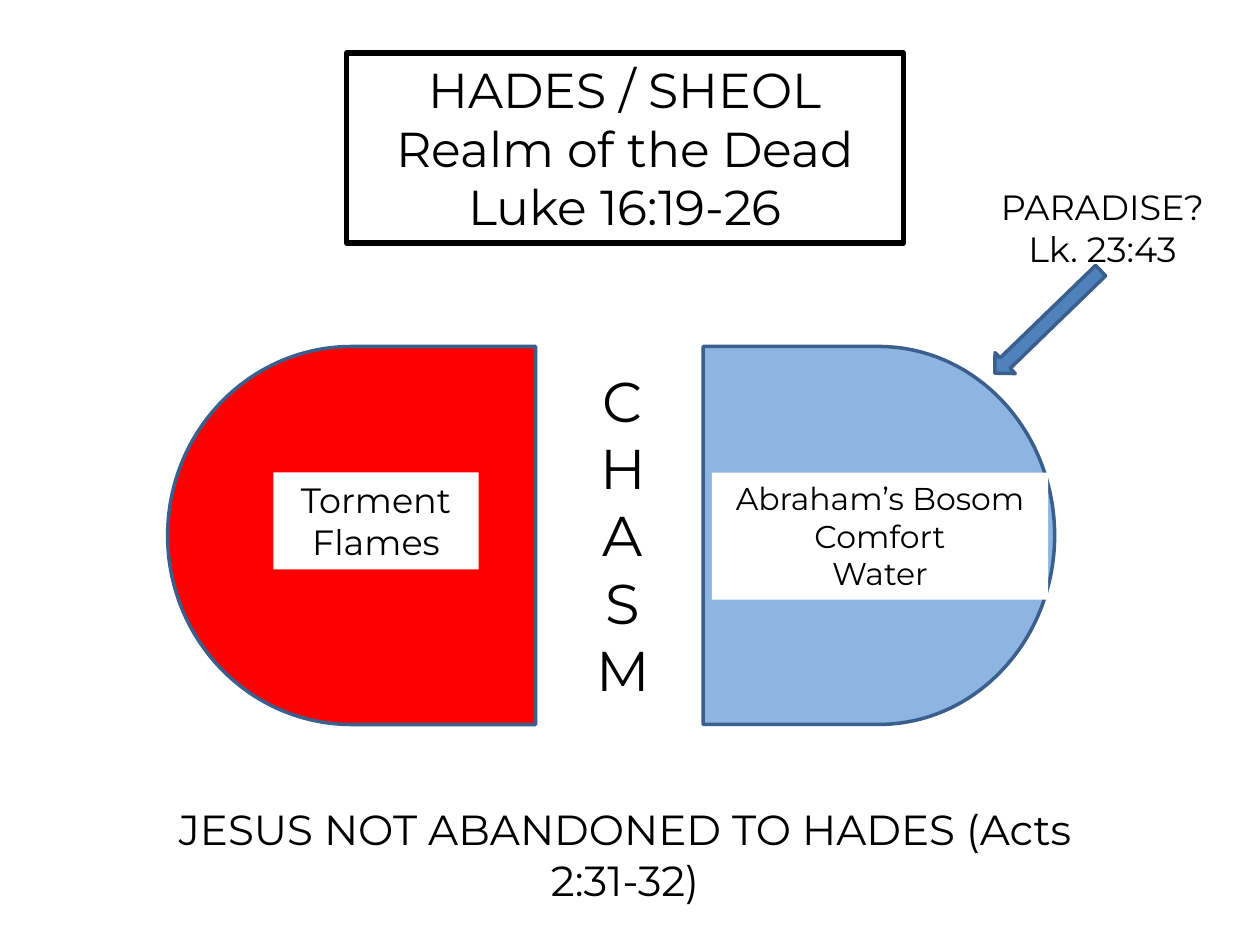
from pptx import Presentation
from pptx.dml.color import RGBColor
from pptx.enum.shapes import MSO_SHAPE
from pptx.enum.text import MSO_ANCHOR, MSO_AUTO_SIZE, PP_ALIGN
from pptx.util import Inches, Pt

COLORS = {
    "text": "000000",
    "label": "FFFFFF",
    "torment": "FF0000",
    "comfort": "8EB4E3",
    "arrow": "4F81BD",
    "outline": "3A5F8C",
}
FONT = "Montserrat"


def color(name):
    return RGBColor.from_string(COLORS[name])


def place(shape, box):
    shape.left, shape.top, shape.width, shape.height = map(Inches, box)


def write(shape, lines, size, anchor=MSO_ANCHOR.TOP):
    frame = shape.text_frame
    frame.text = "\n".join(lines)
    frame.word_wrap = True
    frame.auto_size = MSO_AUTO_SIZE.NONE
    frame.vertical_anchor = anchor
    for para in frame.paragraphs:
        para.alignment = PP_ALIGN.CENTER
        for span in para.runs:
            span.font.name = FONT
            span.font.size = Pt(size)
            span.font.color.rgb = color("text")


def add_title(page, box, lines):
    title = page.shapes.title
    place(title, box)
    write(title, lines, 28)
    title.line.color.rgb = color("text")
    title.line.width = Pt(3)


def add_text(page, box, lines, size):
    write(page.shapes.add_textbox(*map(Inches, box)), lines, size)


def add_figure(page, kind, box, fill, rotation=0):
    figure = page.shapes.add_shape(kind, *map(Inches, box))
    figure.shadow.inherit = False
    figure.rotation = rotation
    figure.fill.solid()
    figure.fill.fore_color.rgb = color(fill)
    figure.line.color.rgb = color("outline")
    figure.line.width = Pt(2)
    return figure


def add_label(page, box, lines, size):
    label = add_figure(page, MSO_SHAPE.RECTANGLE, box, "label")
    label.line.fill.background()
    write(label, lines, size)


def add_realm(page, box, fill, label_box, lines, size, rotation=0):
    add_figure(page, MSO_SHAPE.FLOWCHART_DELAY, box, fill, rotation)
    add_label(page, label_box, lines, size)


def add_paradise(page, text_box, arrow_box):
    add_figure(page, MSO_SHAPE.RIGHT_ARROW, arrow_box, "arrow", 135.9)
    add_text(page, text_box, ["PARADISE?", "Lk. 23:43"], 20)


def main():
    deck = Presentation()
    deck.slide_width, deck.slide_height = Inches(10), Inches(7.5)
    page = deck.slides.add_slide(deck.slide_layouts[5])
    add_title(page, (2.75, 0.42, 4.42, 1.51),
              ["HADES / SHEOL", "Realm of the Dead", "Luke 16:19-26"])
    add_realm(page, (1.33, 2.75, 2.92, 3), "torment",
              (2.17, 3.75, 1.63, 0.77), ["Torment", "Flames"], 20, 180)
    add_realm(page, (5.58, 2.75, 2.79, 3), "comfort",
              (5.65, 3.75, 2.67, 1.01),
              ["Abraham’s Bosom", "Comfort", "Water"], 18)
    add_text(page, (4.61, 2.86, 0.67, 2.79), list("CHASM"), 32)
    add_text(page, (1.17, 6.33, 7.58, 0.91),
             ["JESUS NOT ABANDONED TO HADES (Acts 2:31-32)"], 24)
    add_paradise(page, (7.75, 1.42, 2, 0.77), (7.73, 2.44, 1.17, 0.23))
    deck.save("out.pptx")


if __name__ == "__main__":
    main()
